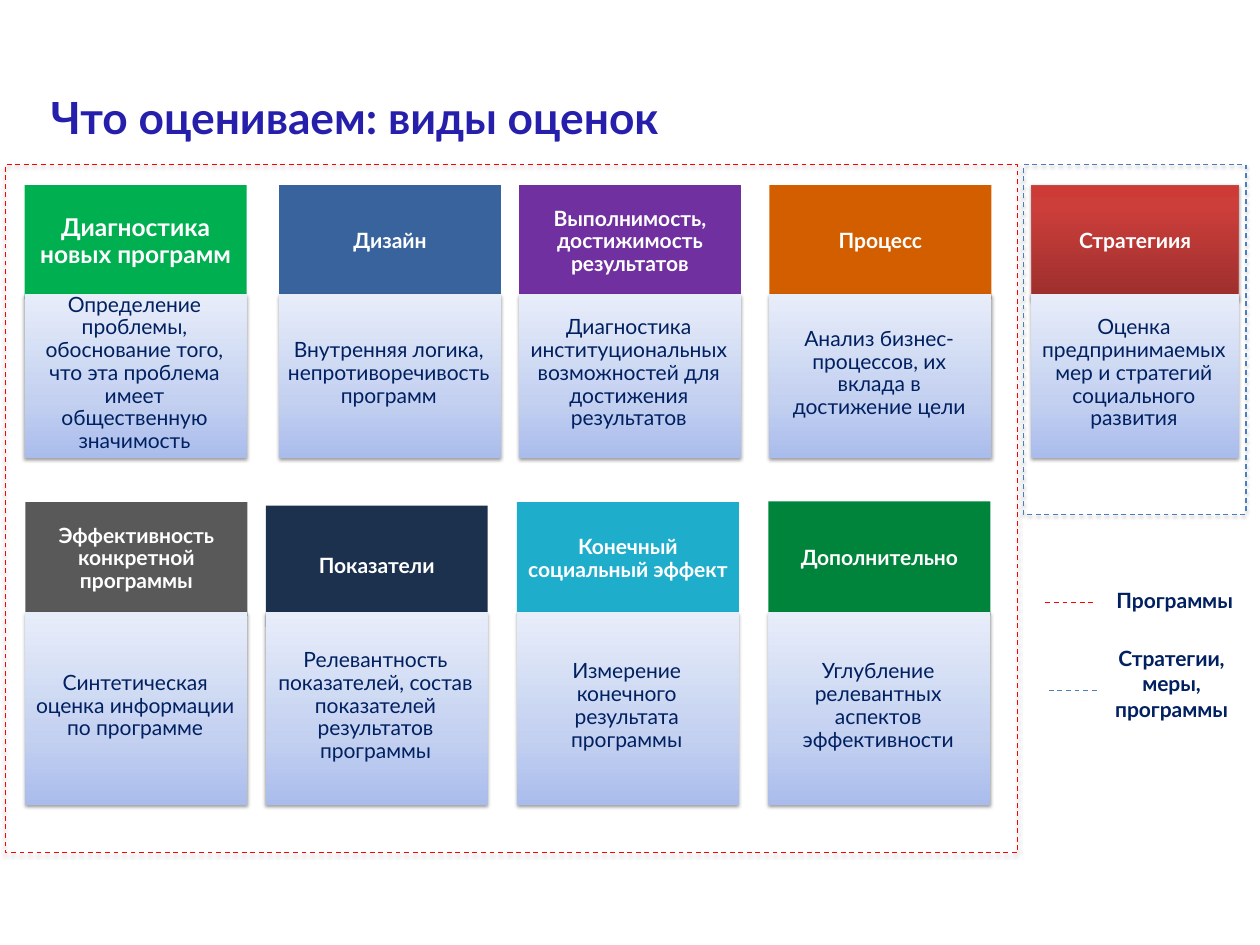
from dataclasses import dataclass

from lxml.etree import SubElement
from pptx import Presentation
from pptx.dml.color import RGBColor
from pptx.enum.dml import MSO_LINE_DASH_STYLE as Dash
from pptx.enum.shapes import MSO_CONNECTOR as Connector, MSO_SHAPE as Shape
from pptx.enum.text import MSO_ANCHOR as Anchor, PP_ALIGN as Align
from pptx.oxml.ns import qn
from pptx.util import Cm, Pt


@dataclass(frozen=True)
class Theme:
    font: str = "Lato"
    title: str = "261FAB"
    ink: str = "002060"
    white: str = "FFFFFF"
    programs: str = "FF0000"
    strategies: str = "4B7EBC"
    strategy_edge: str = "BF4C48"
    body_fill: tuple = ((0, "A9BCEC"), (35, "C3D0F0"), (100, "E8EDFA"))
    strategy_fill: tuple = ((0, "9C2F2D"), (80, "CB3E3A"), (100, "CE3B37"))
    title_size: float = 36
    large_size: float = 19.9
    text_size: float = 17.1


theme = Theme()


def write(shape, text, size=theme.text_size, color=theme.ink, bold=False,
          align=Align.CENTER, anchor=Anchor.MIDDLE, spacing=1.0, insets=None):
    """Fill a shape with one paragraph; insets are left, top, right, bottom in cm."""
    frame = shape.text_frame
    frame.word_wrap = True
    frame.vertical_anchor = anchor
    if insets:
        (frame.margin_left, frame.margin_top,
         frame.margin_right, frame.margin_bottom) = map(Cm, insets)
    para = frame.paragraphs[0]
    para.alignment = align
    para.line_spacing = spacing
    span = para.add_run()
    span.text = text
    span.font.name = theme.font
    span.font.size = Pt(size)
    span.font.bold = bold
    span.font.color.rgb = RGBColor.from_string(color)


def add_box(at, fill=None, line=None, width=1, dash=None, shadow=False):
    """Add a rectangle; fill is a colour, a tuple of gradient stops or None."""
    box = page.shapes.add_shape(Shape.RECTANGLE, *map(Cm, at))
    if fill is None:
        box.fill.background()
    elif isinstance(fill, str):
        box.fill.solid()
        box.fill.fore_color.rgb = RGBColor.from_string(fill)
    else:
        box.fill.gradient()
        box.fill.gradient_angle = 90
        stops = box.element.spPr.find(".//" + qn("a:gsLst"))
        for stop in list(stops):
            stops.remove(stop)
        for position, color in fill:
            stop = SubElement(stops, qn("a:gs"), pos=str(position * 1000))
            SubElement(stop, qn("a:srgbClr"), val=color)
    if line:
        box.line.color.rgb = RGBColor.from_string(line)
        box.line.width = Pt(width)
        box.line.dash_style = dash
    else:
        box.line.fill.background()
    box.shadow.inherit = False
    if shadow:
        effects = box.element.spPr.find(qn("a:effectLst"))
        outer = SubElement(effects, qn("a:outerShdw"), blurRad=str(Pt(3.1)),
                           dist=str(Pt(1.6)), dir="5400000", rotWithShape="0")
        black = SubElement(outer, qn("a:srgbClr"), val="000000")
        SubElement(black, qn("a:alpha"), val="38000")
    return box


deck = Presentation()
deck.slide_width, deck.slide_height = Cm(36.12), Cm(27.1)
page = deck.slides.add_slide(deck.slide_layouts[5])

title = page.shapes.title
title.left, title.top, title.width, title.height = map(Cm, (0.51, 2.36, 27.69, 1.98))
write(title, "Что оцениваем: виды оценок", size=theme.title_size, color=theme.title,
      bold=True, align=Align.LEFT, insets=(0.95, 0.13, 0.25, 0.13))

# Each row: body top, body height, then cards of
# left, width, header top, header height, header fill, heading, description
card_rows = [
    (8.43, 4.7, [
        (0.71, 6.36, 5.31, 3.27, "00B050", "Диагностика новых программ",
         "Определение проблемы, обоснование того, что эта проблема имеет "
         "общественную значимость"),
        (8, 6.36, 5.31, 3.27, "39639D", "Дизайн",
         "Внутренняя логика, непротиворечивость программ"),
        (14.88, 6.36, 5.31, 3.27, "7030A0", "Выполнимость, достижимость результатов",
         "Диагностика институциональных возможностей для достижения результатов"),
        (22.06, 6.36, 5.31, 3.27, "D25E00", "Процесс",
         "Анализ бизнес-процессов, их вклада в достижение цели"),
        (29.57, 5.94, 5.31, 3.27, theme.strategy_fill, "Стратегиия",
         "Оценка предпринимаемых мер и стратегий социального развития"),
    ]),
    (17.55, 5.54, [
        (0.73, 6.36, 14.4, 3.27, "595959", "Эффективность конкретной программы",
         "Синтетическая оценка информации по программе"),
        (7.62, 6.36, 14.5, 3.48, "1C314E", "Показатели",
         "Релевантность показателей, состав показателей результатов программы"),
        (14.82, 6.36, 14.4, 3.27, "1FADCC", "Конечный социальный эффект",
         "Измерение конечного результата программы"),
        (22.03, 6.36, 14.38, 3.27, "00843C", "Дополнительно",
         "Углубление релевантных аспектов эффективности"),
    ]),
]
for body_top, body_height, cards in card_rows:
    for left, width, top, height, fill, heading, description in cards:
        is_strategy = fill == theme.strategy_fill
        is_first = heading.startswith("Диагностика")
        header = add_box((left, top, width, height), fill, shadow=is_strategy,
                         line=theme.strategy_edge if is_strategy else None, width=0.75)
        write(header, heading, color=theme.white, bold=True, spacing=0.9,
              size=theme.large_size if is_first else theme.text_size,
              insets=(0.3, 0.18, 0.3, 0.18))
        body = add_box((left, body_top, width, body_height), theme.body_fill, shadow=True)
        write(body, description, spacing=0.9, insets=(0.23, 0.23, 0.3, 0.36))

for at, color in [((0.15, 4.72, 29.03, 19.74), theme.programs),
                  ((29.34, 4.72, 6.38, 10.03), theme.strategies)]:
    add_box(at, line=color, dash=Dash.DASH, shadow=True)

legend = [
    ("Программы", theme.programs, 29.97, 17.27, (31.45, 16.71, 4.45, 0.99)),
    ("Стратегии, меры, программы", theme.strategies, 30.07, 19.81,
     (31.45, 18.39, 4.27, 2.44)),
]
for label, color, left, level, at in legend:
    sample = page.shapes.add_connector(Connector.STRAIGHT, Cm(left), Cm(level),
                                       Cm(left + 1.46), Cm(level))
    sample.line.color.rgb = RGBColor.from_string(color)
    sample.line.width = Pt(1)
    sample.line.dash_style = Dash.DASH
    SubElement(sample.element.spPr, qn("a:effectLst"))
    write(page.shapes.add_textbox(*map(Cm, at)), label, bold=True, anchor=Anchor.TOP)

deck.save("out.pptx")
